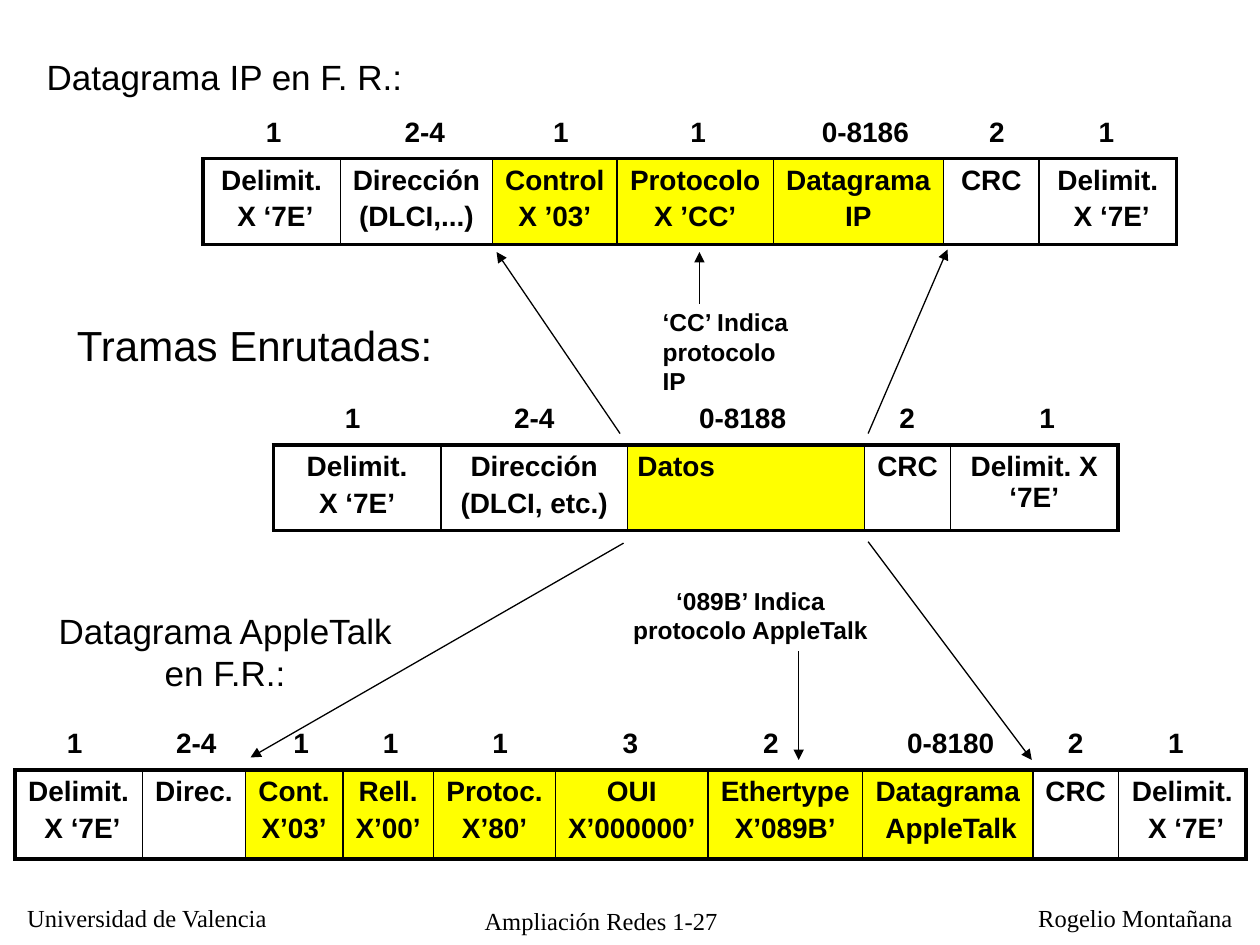
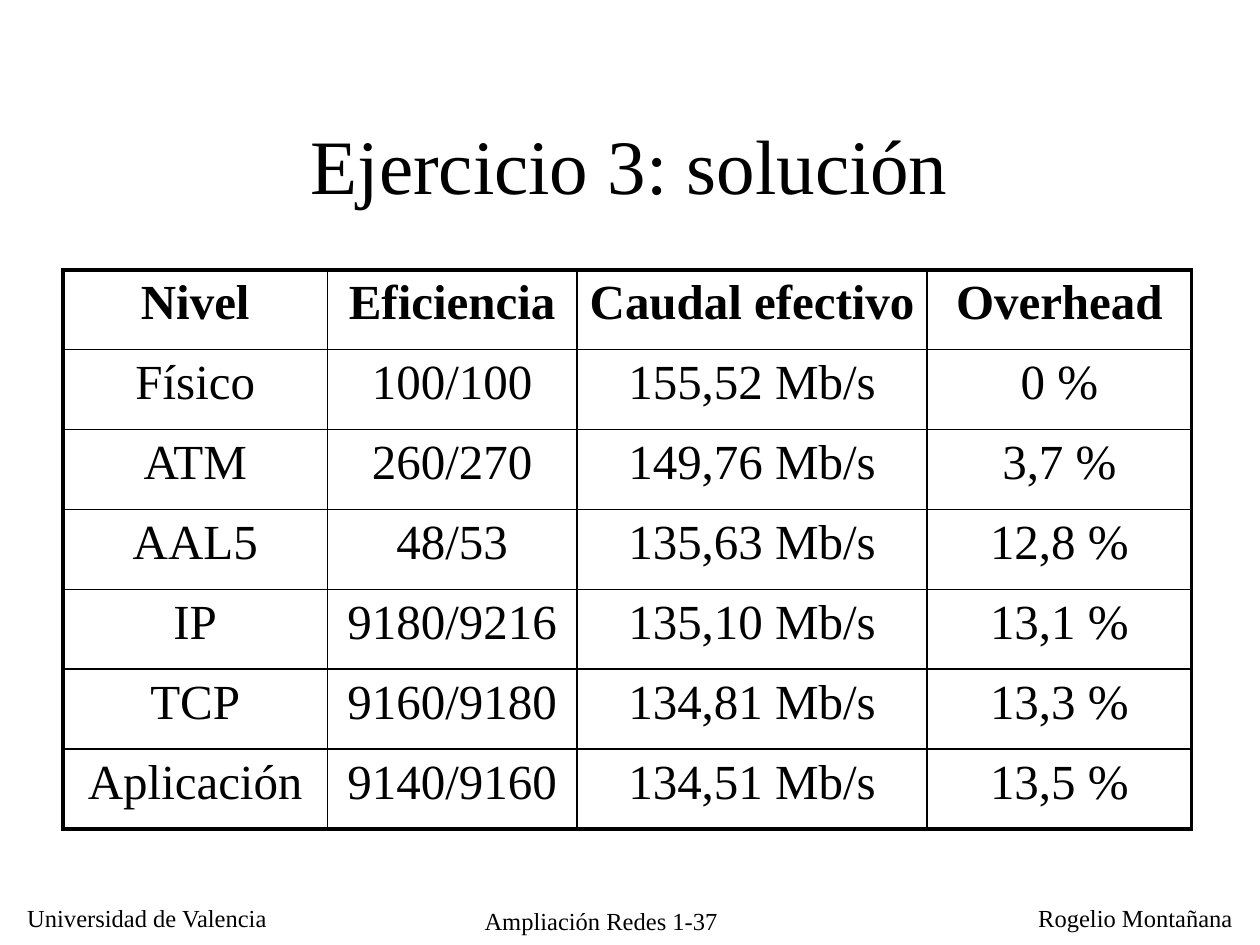
from lxml.etree import SubElement
from pptx import Presentation
from pptx.dml.color import RGBColor
from pptx.enum.shapes import MSO_CONNECTOR, MSO_SHAPE
from pptx.enum.text import MSO_ANCHOR, PP_ALIGN
from pptx.oxml import parse_xml
from pptx.oxml.ns import nsdecls, qn
from pptx.util import Cm, Pt

HUES = {"ink": "000000", "mark": "FFFF00"}
SANS, SERIF = "Arial", "Times New Roman"
LEFT, MID = PP_ALIGN.LEFT, PP_ALIGN.CENTER
THICK, THIN = 2.25, 1

# Each field: width, size label, label shift from the field's centre, text
IP_FRAME = [
    (2.77, "1", 0.04, "Delimit.\n X ‘7E’"),
    (3.07, "2-4", 0.17, "Dirección\n(DLCI,...)"),
    (2.51, "1", 0.12, "Control\nX ’03’"),
    (3.15, "1", 0.06, "Protocolo\nX ’CC’"),
    (3.43, "0-8186", 0.14, "Datagrama\nIP"),
    (1.93, "2", 0.11, "CRC"),
    (2.77, "1", -0.03, "Delimit.\n X ‘7E’"),
]
BASE_FRAME = [
    (3.38, "1", -0.09, "Delimit.\nX ‘7E’"),
    (3.76, "2-4", 0, "Dirección\n(DLCI, etc.)"),
    (4.78, "0-8188", -0.07, "Datos"),
    (1.73, "2", -0.01, "CRC"),
    (3.38, "1", 0.26, "Delimit. X ‘7E’"),
]
TALK_FRAME = [
    (2.57, "1", -0.08, "Delimit.\n X ‘7E’"),
    (2.08, "2-4", 0.05, "Direc."),
    (1.96, "1", 0.14, "Cont.\nX’03’"),
    (1.83, "1", 0.05, "Rell.\nX’00’"),
    (2.46, "1", 0.11, "Protoc.\nX’80’"),
    (3.07, "3", -0.03, "OUI\nX’000000’"),
    (3.12, "2", -0.29, "Ethertype\nX’089B’"),
    (3.43, "0-8180", 0.06, "Datagrama\n AppleTalk"),
    (1.73, "2", 0, "CRC"),
    (2.57, "1", -0.13, "Delimit.\n X ‘7E’"),
]
ARROWS = [
    (12.5, 8.74, 10.01, 5.08),
    (17.5, 8.74, 19.1, 5.03),
    (14.1, 6.12, 14.1, 5.08),
    (12.57, 10.95, 5.05, 15.27),
    (17.5, 10.92, 20.8, 15.32),
    (16.1, 13.13, 16.1, 15.32),
]
LEVELS = [
    ("Nivel", "Eficiencia", "Caudal efectivo", "Overhead"),
    ("Físico", "100/100", "155,52 Mb/s", "0 %"),
    ("ATM", "260/270", "149,76 Mb/s", "3,7 %"),
    ("AAL5", "48/53", "135,63 Mb/s", "12,8 %"),
    ("IP", "9180/9216", "135,10 Mb/s", "13,1 %"),
    ("TCP", "9160/9180", "134,81 Mb/s", "13,3 %"),
    ("Aplicación", "9140/9160", "134,51 Mb/s", "13,5 %"),
]


def hue(name):
    """Return a named colour."""
    return RGBColor.from_string(HUES[name])


def write(frame, text, size, font=SANS, bold=False, align=LEFT, gap=0):
    """Set the text of a frame and format its runs."""
    frame.text = text
    for para in frame.paragraphs:
        para.alignment = align
        para.space_before = Pt(gap)
        for run in para.runs:
            run.font.size, run.font.name, run.font.bold = Pt(size), font, bold
            run.font.color.rgb = hue("ink")


def add_text(slide, box, text, size, wrap=False, **style):
    """Add a text box; box is left, top, width, height in cm."""
    frame = slide.shapes.add_textbox(*map(Cm, box)).text_frame
    frame.word_wrap = wrap
    write(frame, text, size, **style)


def add_arrow(slide, ends):
    """Add a thin arrow between two points."""
    line = slide.shapes.add_connector(MSO_CONNECTOR.STRAIGHT, *map(Cm, ends))
    line.line.width = Pt(0.75)
    line.line.color.rgb = hue("ink")
    SubElement(line.line._get_or_add_ln(), qn("a:tailEnd"), type="triangle")
    SubElement(line._element.spPr, qn("a:effectLst"))


def add_edges(cell, sides):
    """Draw the cell borders, given as widths by side."""
    props = cell._tc.get_or_add_tcPr()
    for spot, (side, width) in enumerate(sides.items()):
        props.insert(spot, parse_xml(
            f'<a:ln{side} {nsdecls("a")} w="{Pt(width)}"><a:solidFill>'
            f'<a:srgbClr val="{HUES["ink"]}"/></a:solidFill></a:ln{side}>'))


def add_grid(slide, left, top, widths, height, rows, size, font, heads=0):
    """Add a clear table with thick outer and thin inner borders."""
    last, end = len(rows) - 1, len(widths) - 1
    box = (left, top, sum(widths), height * len(rows))
    table = slide.shapes.add_table(last + 1, end + 1, *map(Cm, box)).table
    table.first_row = heads > 0
    table.horz_banding = False
    for col, width in zip(table.columns, widths):
        col.width = Cm(width)
    for r, row in enumerate(rows):
        table.rows[r].height = Cm(height)
        for c, text in enumerate(row):
            cell = table.cell(r, c)
            cell.margin_left = cell.margin_right = Cm(0.2)
            cell.fill.background()
            write(cell.text_frame, text, size, font, r < heads, MID, size / 5)
            add_edges(cell, {"L": THIN if c else THICK,
                             "R": THIN if c < end else THICK,
                             "T": THIN if r else THICK,
                             "B": THIN if r < last else THICK})
    return table


def add_frame(slide, left, top, height, fields, first, stop):
    """Add a frame with size labels, marking fields first to stop."""
    widths, sizes, shifts, texts = zip(*fields)
    start = left + sum(widths[:first])
    band = slide.shapes.add_shape(
        MSO_SHAPE.RECTANGLE, Cm(start), Cm(top),
        Cm(sum(widths[first:stop])), Cm(height))
    band.shadow.inherit = False
    band.fill.solid()
    band.fill.fore_color.rgb = hue("mark")
    band.line.color.rgb = hue("ink")
    band.line.width = Pt(0.75)
    table = add_grid(slide, left, top, widths, height, [texts], 16, SANS, 1)
    for i, (size, shift) in enumerate(zip(sizes, shifts)):
        centre = left + sum(widths[:i]) + widths[i] / 2 + shift
        wide = 0.52 + 0.29 * len(size)
        add_text(slide, (centre - wide / 2, top - 1.02, wide, 0.94),
                 size, 16, bold=True, align=MID)
    return table


def add_foot(slide, page):
    """Add the shared footer line."""
    add_text(slide, (8.92, 18.14, 6.4, 0.76), f"Ampliación Redes 1-{page}",
             14, wrap=True, font=SERIF, align=MID)
    add_text(slide, (0.3, 18.08, 5.41, 0.84), "Universidad de Valencia",
             14, font=SERIF)
    add_text(slide, (20.68, 18.08, 4.42, 0.84), "Rogelio Montañana",
             14, font=SERIF)


def draw_frames(deck):
    """Build the slide that compares routed frames."""
    slide = deck.slides.add_slide(deck.slide_layouts[6])
    add_foot(slide, 27)
    add_frame(slide, 0.3, 15.52, 1.8, TALK_FRAME, 2, 8)
    base = add_frame(slide, 5.51, 8.97, 1.72, BASE_FRAME, 2, 3)
    base.cell(0, 2).text_frame.paragraphs[0].alignment = LEFT
    add_frame(slide, 4.09, 3.2, 1.73, IP_FRAME, 2, 5)
    add_text(slide, (1.3, 6.32, 7.72, 1.27), "Tramas Enrutadas:", 24)
    add_text(slide, (0.69, 0.99, 7.75, 1.09), "Datagrama IP en F. R.:", 20)
    add_text(slide, (0.58, 12.17, 7.92, 1.96), "Datagrama AppleTalk en F.R.:",
             20, wrap=True, align=MID)
    add_text(slide, (13.11, 6.07, 3.2, 1.45), "‘CC’ Indica\nprotocolo IP",
             14, wrap=True, bold=True)
    add_text(slide, (12.5, 11.68, 5.26, 1.45),
             "‘089B’ Indica\nprotocolo AppleTalk", 14, bold=True, align=MID)
    for ends in ARROWS:
        add_arrow(slide, ends)


def draw_answer(deck):
    """Build the titled slide with the table of levels."""
    slide = deck.slides.add_slide(deck.slide_layouts[5])
    add_foot(slide, 37)
    title = slide.shapes.title
    title.left, title.top, title.width, title.height = map(
        Cm, (1.9, 1.7, 21.59, 3.18))
    title.text_frame.vertical_anchor = MSO_ANCHOR.MIDDLE
    write(title.text_frame, "Ejercicio 3: solución", 44, SERIF, align=MID)
    add_grid(slide, 1.27, 5.44, (5.33, 5.03, 7.06, 5.33), 1.61,
             LEVELS, 28, SERIF, 1)


def main():
    """Build and save the deck."""
    deck = Presentation()
    deck.slide_width, deck.slide_height = Cm(25.4), Cm(19.05)
    draw_frames(deck)
    draw_answer(deck)
    deck.save("out.pptx")


if __name__ == "__main__":
    main()
